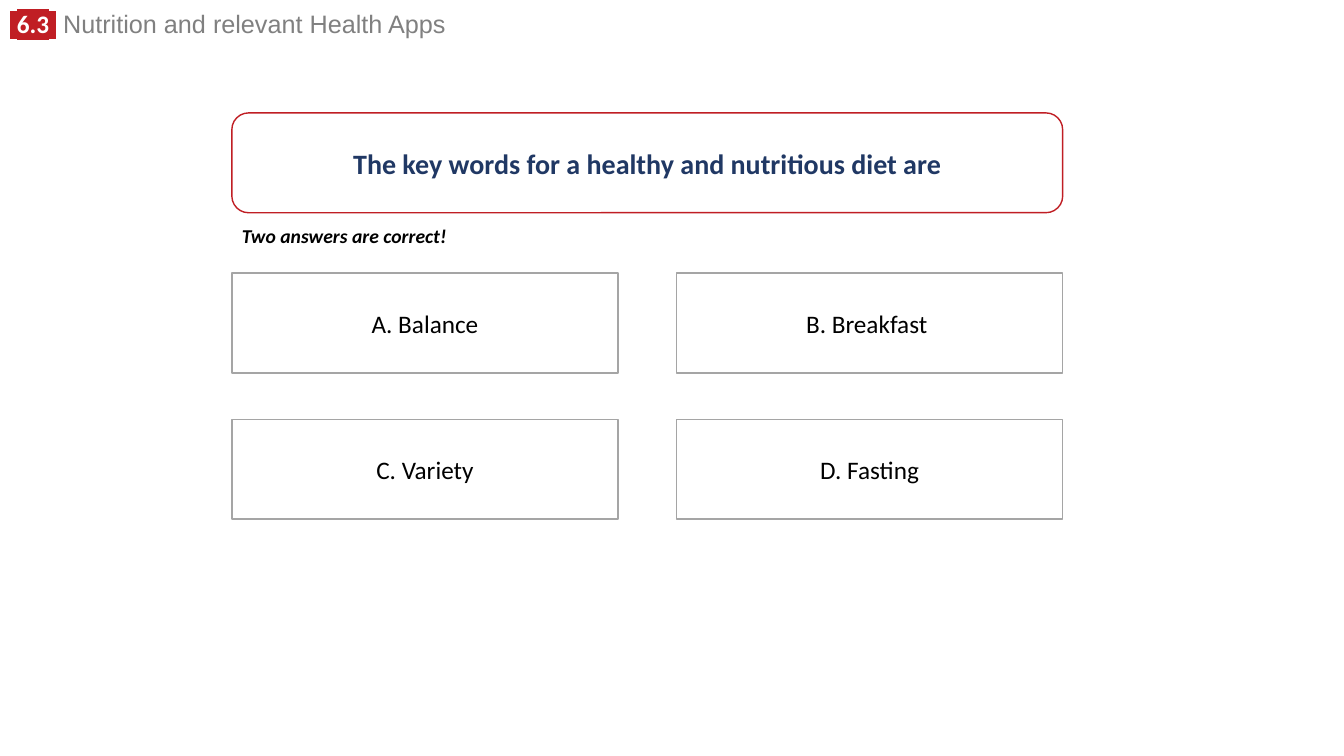
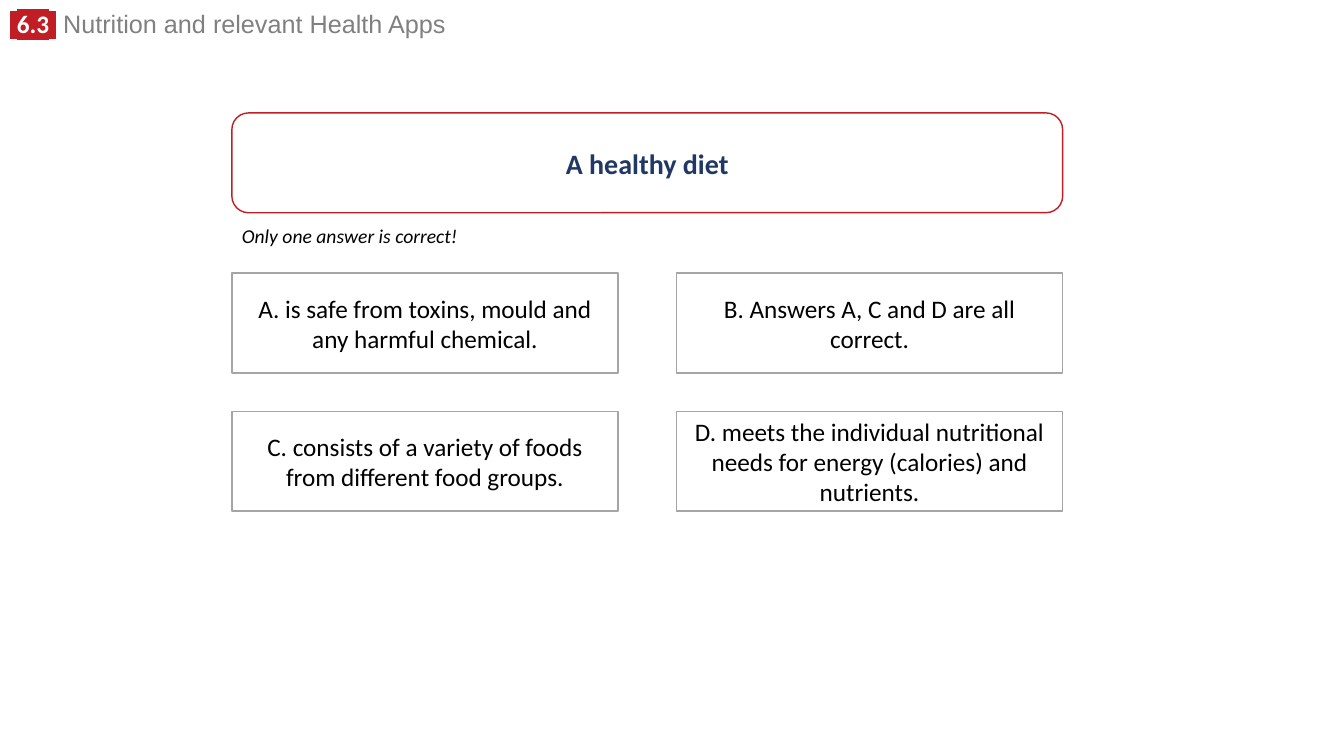
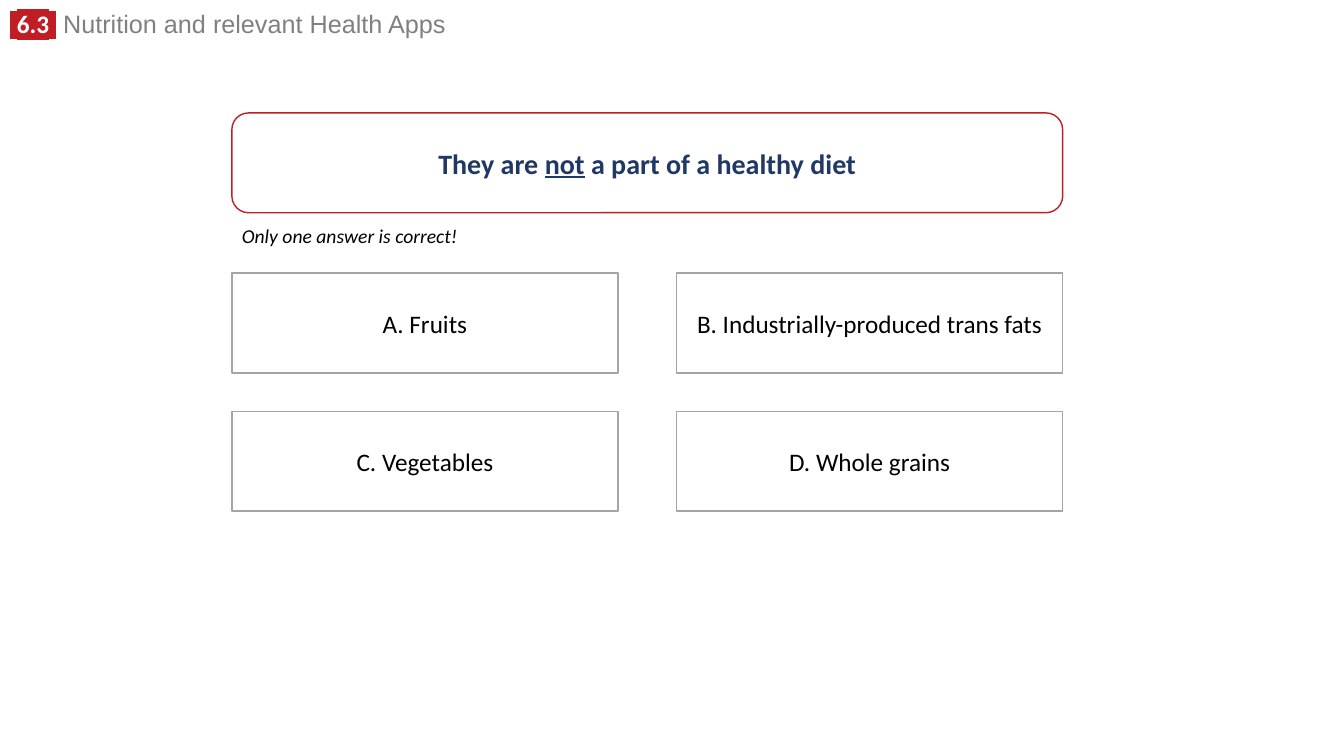
from lxml.etree import SubElement
from pptx import Presentation
from pptx.dml.color import RGBColor
from pptx.enum.shapes import MSO_SHAPE as Shape
from pptx.enum.text import MSO_ANCHOR as Anchor, MSO_AUTO_SIZE as Auto, PP_ALIGN as Align
from pptx.oxml.ns import qn
from pptx.util import Inches, Pt

RED, NAVY, GREY = "C01E24", "203864", "A5A5A5"
WHITE, BLACK, MUTED = "FFFFFF", "000000", "808080"

TAG = {"size": 18, "color": WHITE, "bold": True, "mark": RED}
HEAD = [
    (" ", {**TAG, "face": "Arial"}),
    ("6.3", TAG),
    (" ", {**TAG, "face": "Arial"}),
    (" Nutrition and relevant Health Apps", {"size": 18, "color": MUTED, "face": "Arial"}),
]
ASK = {"size": 20, "color": NAVY, "bold": True}
HINT = {"size": 14, "color": BLACK, "italic": True}
PICK = {"size": 18, "color": BLACK}

ONE = ("Only one answer is correct!", HINT)
QUIZ = [
    {
        "ask": [("The key words for a healthy and nutritious diet are", ASK)],
        "hint": ("Two answers are correct!", {**HINT, "bold": True}),
        "picks": ["A. Balance", "B. Breakfast ", "C. Variety", "D. Fasting"],
        "step": 1.45,
    },
    {
        "ask": [("A healthy diet", ASK)],
        "hint": ONE,
        "picks": [
            "A. is safe from toxins, mould and any harmful chemical.",
            "B. Answers A, C and D are all correct.",
            "C. consists of a variety of foods from different food groups.",
            "D. meets the individual nutritional needs for energy (calories) and nutrients.",
        ],
        "step": 1.37,
    },
    {
        "ask": [
            ("They are ", ASK),
            ("not", {**ASK, "under": True}),
            (" a part of a healthy diet", ASK),
        ],
        "hint": ONE,
        "picks": [
            "A. Fruits",
            "B. Industrially-produced trans fats",
            "C. Vegetables",
            "D. Whole grains",
        ],
        "step": 1.37,
    },
]

LEFT, TOP, WIDE, TALL = 2.3, 2.71, 8.24, 0.99
CELL = 3.83


def rgb(code):
    """Turn a hex string into a colour."""
    return RGBColor.from_string(code)


def write(para, text, size, color, face="Calibri", bold=False, italic=False, under=False, mark=None):
    """Add one styled run to a paragraph."""
    run = para.add_run()
    run.text = text
    font = run.font
    font.size, font.bold, font.italic, font.underline = Pt(size), bold, italic, under
    font.color.rgb = rgb(color)
    if mark:
        high = SubElement(run._r.get_or_add_rPr(), qn("a:highlight"))
        SubElement(high, qn("a:srgbClr"), val=mark)
    font.name = face


def label(slide, at, runs, wrap):
    """Add a text box and return its paragraph."""
    frame = slide.shapes.add_textbox(*map(Inches, at)).text_frame
    frame.word_wrap, frame.auto_size = wrap, Auto.SHAPE_TO_FIT_TEXT
    para = frame.paragraphs[0]
    for text, style in runs:
        write(para, text, **style)
    return para


def card(slide, kind, at, edge, runs):
    """Add an outlined white box with centred text."""
    box = slide.shapes.add_shape(kind, *map(Inches, at))
    box.shadow.inherit = False
    box.fill.solid()
    box.fill.fore_color.rgb = rgb(WHITE)
    box.line.color.rgb = rgb(edge)
    box.line.width = Pt(1)
    frame = box.text_frame
    frame.word_wrap, frame.vertical_anchor = True, Anchor.MIDDLE
    para = frame.paragraphs[0]
    para.alignment = Align.CENTER
    for text, style in runs:
        write(para, text, **style)


def build(deck, item):
    """Add one quiz slide."""
    slide = deck.slides.add_slide(deck.slide_layouts[6])
    label(slide, (0, 0.09, 9.52, 0.35), HEAD, True).line_spacing = 0.8
    card(slide, Shape.ROUNDED_RECTANGLE, (LEFT, 1.12, WIDE, TALL), RED, item["ask"])
    label(slide, (LEFT, 2.17, 2.36, 0.34), [item["hint"]], False)
    for i, text in enumerate(item["picks"]):
        row, col = divmod(i, 2)
        at = (LEFT + col * (WIDE - CELL), TOP + row * item["step"], CELL, TALL)
        card(slide, Shape.RECTANGLE, at, GREY, [(text, PICK)])


def main():
    """Build the deck and save it."""
    deck = Presentation()
    deck.slide_width, deck.slide_height = Inches(13.33), Inches(7.5)
    for item in QUIZ:
        build(deck, item)
    deck.save("out.pptx")


if __name__ == "__main__":
    main()
